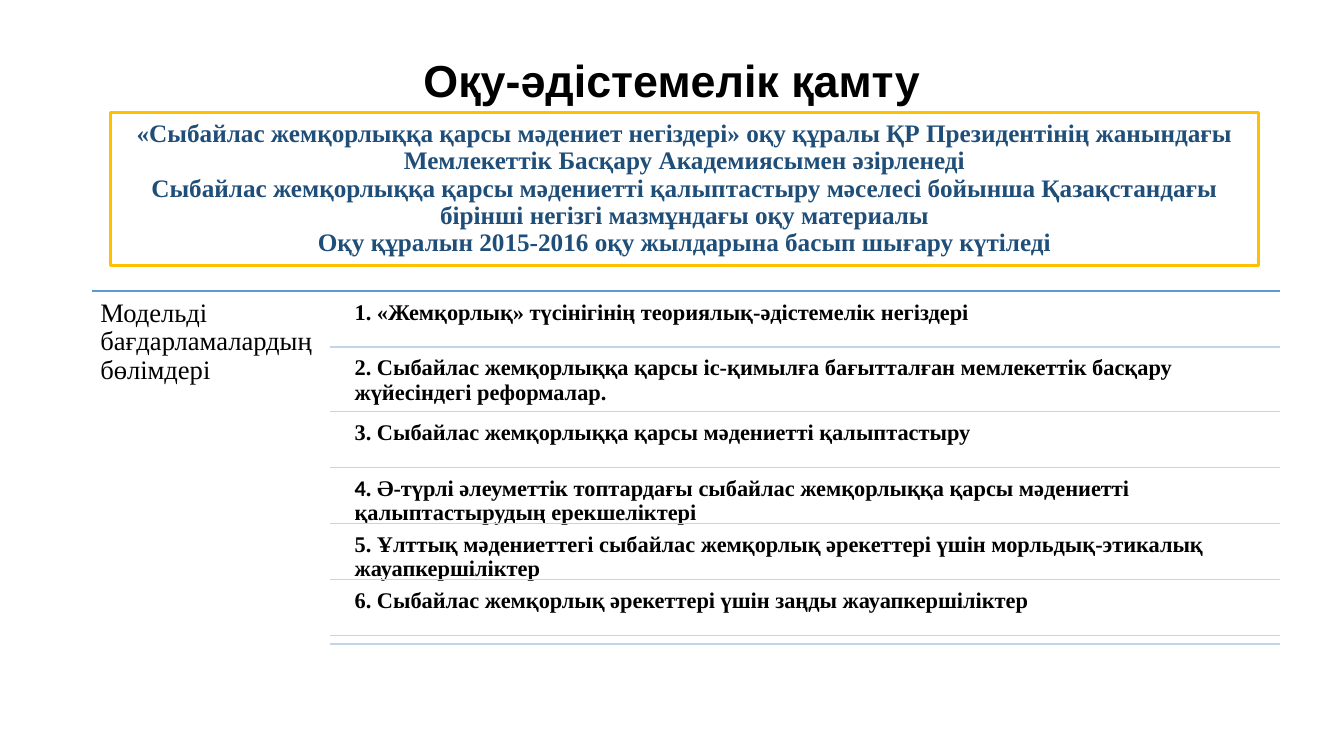
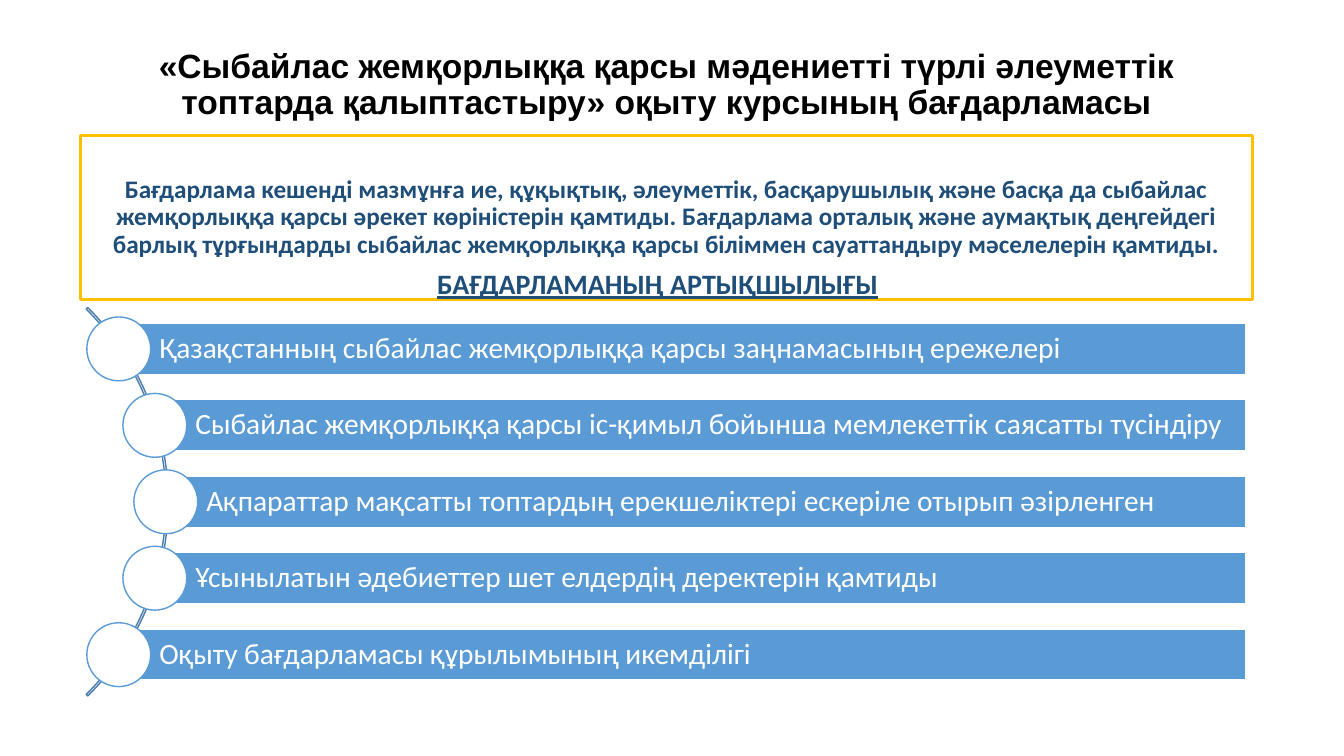
from dataclasses import dataclass
from itertools import accumulate
from math import sqrt

from lxml.etree import SubElement
from pptx import Presentation
from pptx.dml.color import RGBColor
from pptx.enum.shapes import MSO_CONNECTOR as CONN, MSO_SHAPE as SHAPE
from pptx.enum.text import MSO_ANCHOR as ANCHOR, MSO_AUTO_SIZE as AUTO, PP_ALIGN as ALIGN
from pptx.oxml.ns import qn
from pptx.util import Pt


@dataclass(frozen=True)
class Theme:
    black: str = "000000"
    white: str = "FFFFFF"
    navy: str = "1F4E79"
    gold: str = "FFC000"
    blue: str = "5B9BD5"
    arc: str = "497CAB"
    rule: str = "C4D5EB"
    head: str = "Arial"
    serif: str = "Times New Roman"
    sans: str = "Calibri"
    title: int = 32
    long_title: int = 24
    intro: int = 18
    section: int = 20
    label: int = 19
    chapter: int = 16
    bar: int = 21


T = Theme()

SUPPORT = {
    "title": "Оқу-әдістемелік қамту",
    "intro": [
        "«Сыбайлас жемқорлыққа қарсы мәдениет негіздері» оқу құралы ҚР Президентінің жанындағы Мемлекеттік Басқару Академиясымен әзірленеді",
        "Сыбайлас жемқорлыққа қарсы мәдениетті қалыптастыру мәселесі бойынша Қазақстандағы бірінші негізгі мазмұндағы оқу материалы",
        "Оқу құралын 2015-2016 оқу жылдарына басып шығару күтіледі",
    ],
    "label": "Модельді бағдарламалардың бөлімдері",
    "chapters": [
        ("1. «Жемқорлық» түсінігінің теориялық-әдістемелік негіздері", 40),
        ("2. Сыбайлас жемқорлыққа қарсы іс-қимылға бағытталған мемлекеттік басқару жүйесіндегі реформалар.", 46),
        ("3. Сыбайлас жемқорлыққа қарсы мәдениетті қалыптастыру", 40),
        ([("4", T.sans),
          (". Ә-түрлі әлеуметтік топтардағы сыбайлас жемқорлыққа қарсы мәдениетті қалыптастырудың ерекшеліктері", T.serif)], 40),
        ("5. Ұлттық мәдениеттегі сыбайлас жемқорлық әрекеттері үшін морльдық-этикалық жауапкершіліктер", 40),
        ("6. Сыбайлас жемқорлық әрекеттері үшін заңды жауапкершіліктер", 40),
    ],
}

COURSE = {
    "title": "«Сыбайлас жемқорлыққа қарсы мәдениетті түрлі әлеуметтік топтарда қалыптастыру» оқыту курсының бағдарламасы",
    "intro": [
        "Бағдарлама кешенді мазмұнға ие, құқықтық, әлеуметтік, басқарушылық және басқа да сыбайлас жемқорлыққа қарсы әрекет көріністерін қамтиды. Бағдарлама орталық және аумақтық деңгейдегі барлық тұрғындарды сыбайлас жемқорлыққа қарсы біліммен сауаттандыру мәселелерін қамтиды.",
    ],
    "section": "БАҒДАРЛАМАНЫҢ АРТЫҚШЫЛЫҒЫ",
    "benefits": [
        "Қазақстанның сыбайлас жемқорлыққа қарсы заңнамасының ережелері",
        "Сыбайлас жемқорлыққа қарсы іс-қимыл бойынша мемлекеттік саясатты түсіндіру",
        "Ақпараттар мақсатты топтардың ерекшеліктері ескеріле отырып әзірленген",
        "Ұсынылатын әдебиеттер шет елдердің деректерін қамтиды",
        "Оқыту бағдарламасы құрылымының икемділігі",
    ],
}


def rgb(color):
    return RGBColor.from_string(color)


def place(sp, box):
    sp.left, sp.top, sp.width, sp.height = map(Pt, box)


def write(sp, lines, size, color, font, bold=False, underline=None,
          align=ALIGN.LEFT, anchor=ANCHOR.TOP, insets=(7.2, 3.6, 7.2, 3.6)):
    tf = sp.text_frame
    tf.word_wrap, tf.auto_size, tf.vertical_anchor = True, AUTO.NONE, anchor
    tf.margin_left, tf.margin_top, tf.margin_right, tf.margin_bottom = map(Pt, insets)
    for i, line in enumerate(lines):
        p = tf.add_paragraph() if i else tf.paragraphs[0]
        p.alignment, p.line_spacing = align, 0.9
        for text, face in [(line, font)] if isinstance(line, str) else line:
            r = p.add_run()
            r.text = text
            r.font.name, r.font.size = face, Pt(size)
            r.font.bold, r.font.underline = bold, underline
            r.font.color.rgb = rgb(color)


def add_text(s, box, lines, *style, **options):
    write(s.shapes.add_textbox(*map(Pt, box)), lines, *style, **options)


def add_shape(s, kind, box, line, fill=None, width=1):
    sp = s.shapes.add_shape(kind, *map(Pt, box))
    sp.shadow.inherit = False
    if fill:
        sp.fill.solid()
        sp.fill.fore_color.rgb = rgb(fill)
    else:
        sp.fill.background()
    sp.line.color.rgb, sp.line.width = rgb(line), Pt(width)
    return sp


def add_rule(s, left, right, y, color):
    line = s.shapes.add_connector(CONN.STRAIGHT, *map(Pt, (left, y, right, y)))
    line.line.color.rgb, line.line.width = rgb(color), Pt(1)
    SubElement(line._element.spPr, qn("a:effectLst"))


def add_slide(prs, content, title_box, title_size, intro_box, intro_font):
    s = prs.slides.add_slide(prs.slide_layouts[5])
    centred = dict(bold=True, align=ALIGN.CENTER, anchor=ANCHOR.MIDDLE)
    place(s.shapes.title, title_box)
    write(s.shapes.title, [content["title"]], title_size, T.black, T.head, **centred)
    intro = add_shape(s, SHAPE.RECTANGLE, intro_box, T.gold, width=2)
    write(intro, content["intro"], T.intro, T.navy, intro_font, **centred)
    return s


def support_slide(prs):
    s = add_slide(prs, SUPPORT, (66, 29, 828, 60), T.title, (79, 80.5, 820, 109), T.serif)
    left, right, top, rule_left, text_left, gap = 66, 914, 208, 235.5, 248.5, 2
    add_rule(s, left, right, top, T.blue)
    add_text(s, (left, top, 170, 288), [SUPPORT["label"]], T.label, T.black, T.serif,
             insets=(5.7,) * 4)
    chapters = SUPPORT["chapters"]
    edges = list(accumulate((height for _, height in chapters), initial=top))
    for (chapter, height), y in zip(chapters, edges):
        add_text(s, (text_left, y + gap, right - text_left, height - gap), [chapter],
                 T.chapter, T.black, T.serif, bold=True, insets=(4.8,) * 4)
    for y in edges[1:] + [edges[-1] + 6]:
        add_rule(s, rule_left, right, y, T.rule)


def course_slide(prs):
    s = add_slide(prs, COURSE, (57.5, 29, 837, 64), T.long_title, (57.5, 97, 837, 117), T.sans)
    centre_x, centre_y, radius, arc_radius = -76, 358.4, 194.4, 196.2
    pitch, bar_height, bar_right, dot = 54.6, 36.5, 890, 45.6

    arc = add_shape(s, SHAPE.BLOCK_ARC, (centre_x - arc_radius, centre_y - arc_radius,
                                         2 * arc_radius, 2 * arc_radius), T.arc)
    for i, value in enumerate((189, 27, 0.004)):
        arc.adjustments[i] = value

    benefits = COURSE["benefits"]
    for i, benefit in enumerate(benefits):
        dy = (i - (len(benefits) - 1) / 2) * pitch
        x, y = centre_x + sqrt(radius ** 2 - dy ** 2), centre_y + dy
        bar = add_shape(s, SHAPE.RECTANGLE, (x, y - bar_height / 2, bar_right - x, bar_height),
                        T.white, T.blue)
        write(bar, [benefit], T.bar, T.white, T.sans, anchor=ANCHOR.MIDDLE,
              insets=(29, 4, 4, 4))
        add_shape(s, SHAPE.OVAL, (x - dot / 2, y - dot / 2, dot, dot), T.blue, T.white)

    add_text(s, (57.5, 190, 824.5, 28), [COURSE["section"]], T.section, T.navy, T.sans,
             bold=True, underline=True, align=ALIGN.CENTER, anchor=ANCHOR.MIDDLE)


def main():
    prs = Presentation()
    prs.slide_width, prs.slide_height = Pt(960), Pt(540)
    support_slide(prs)
    course_slide(prs)
    prs.save("out.pptx")


if __name__ == "__main__":
    main()
